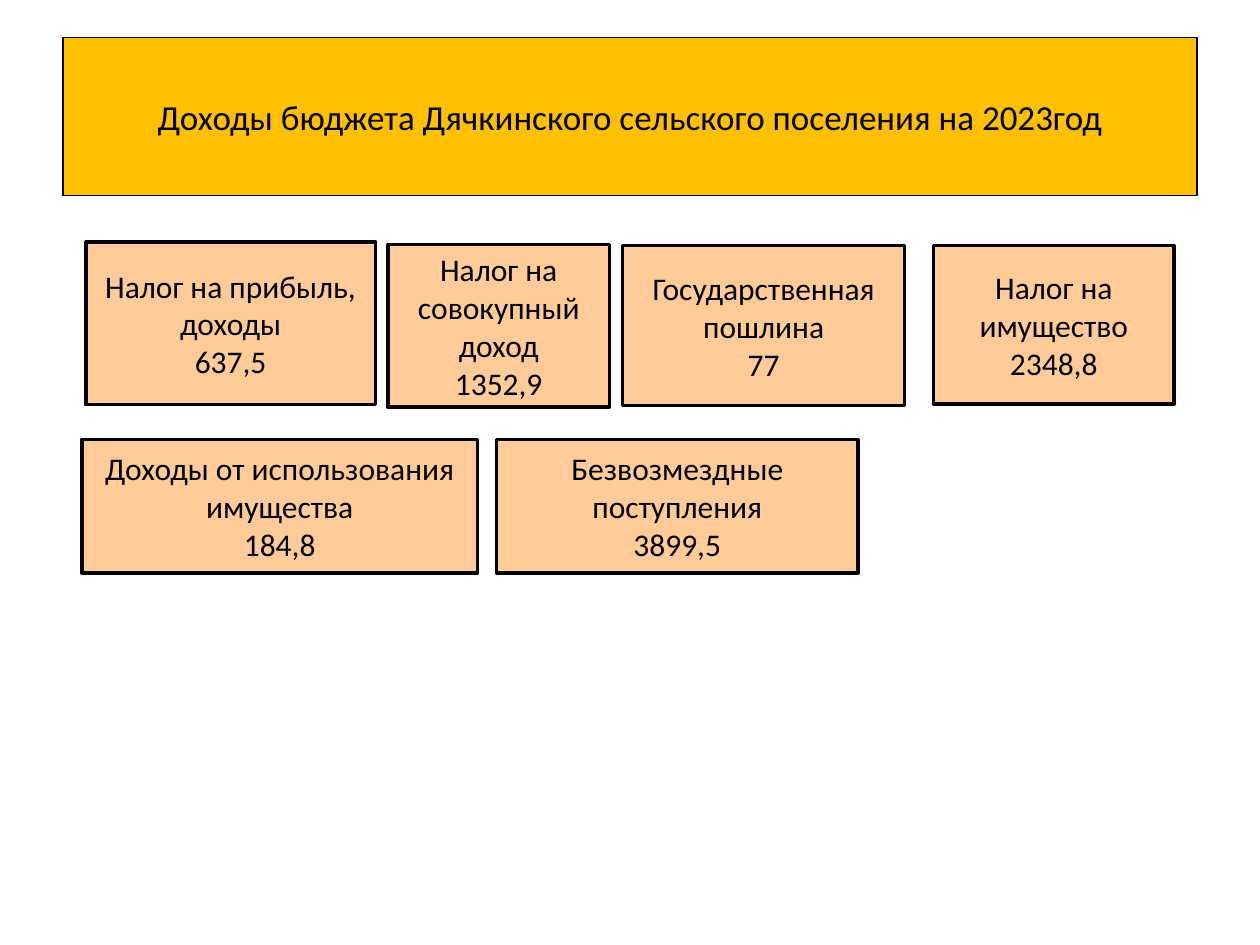
from pptx import Presentation
from pptx import util as u
from pptx.dml.color import RGBColor
from pptx.enum import shapes, text

BLACK = RGBColor(0x00, 0x00, 0x00)
GOLD = RGBColor(0xFF, 0xC0, 0x00)
PEACH = RGBColor(0xFF, 0xCC, 0x99)

# left, top, width, height in cm, then income source and amount
BOXES = [
    (1.73, 4.88, 5.84, 3.28, "Налог на прибыль, доходы", "637,5"),
    (7.82, 4.93, 4.47, 3.28, "Налог на совокупный доход", "1352,9"),
    (12.55, 4.95, 5.69, 3.23, "Государственная пошлина", "77"),
    (18.82, 4.95, 4.85, 3.2, "Налог на имущество", "2348,8"),
    (1.65, 8.86, 7.98, 2.69, "Доходы от использования имущества", "184,8"),
    (10.01, 8.86, 7.29, 2.69, "Безвозмездные поступления", "3899,5"),
]


def style(box, lines, fill, edge, size):
    """Fill and outline a box and write its centred lines."""
    box.fill.solid()
    box.fill.fore_color.rgb = fill
    box.line.color.rgb = BLACK
    box.line.width = u.Pt(edge)
    frame = box.text_frame
    frame.text = "\n".join(lines)
    look = {"word_wrap": True, "vertical_anchor": text.MSO_ANCHOR.MIDDLE}
    for key, value in look.items():
        setattr(frame, key, value)
    face = {"name": "Calibri", "size": u.Pt(size), "bold": False}
    for para in frame.paragraphs:
        para.alignment = text.PP_ALIGN.CENTER
        for key, value in face.items():
            setattr(para.runs[0].font, key, value)
        para.runs[0].font.color.rgb = BLACK


deck = Presentation()
deck.slide_width, deck.slide_height = u.Cm(25.4), u.Cm(19.05)
slide = deck.slides.add_slide(deck.slide_layouts[5])

title = slide.shapes.title
place = {"left": 1.27, "top": 0.76, "width": 22.86, "height": 3.18}
for key, value in place.items():
    setattr(title, key, u.Cm(value))
style(title, ["Доходы бюджета Дячкинского сельского поселения на 2023год"],
      GOLD, 0.75, 20)

for *area, source, amount in BOXES:
    box = slide.shapes.add_shape(shapes.MSO_SHAPE.RECTANGLE, *map(u.Cm, area))
    box.shadow.inherit = False
    style(box, [source, amount], PEACH, 2, 18)

deck.save("out.pptx")
